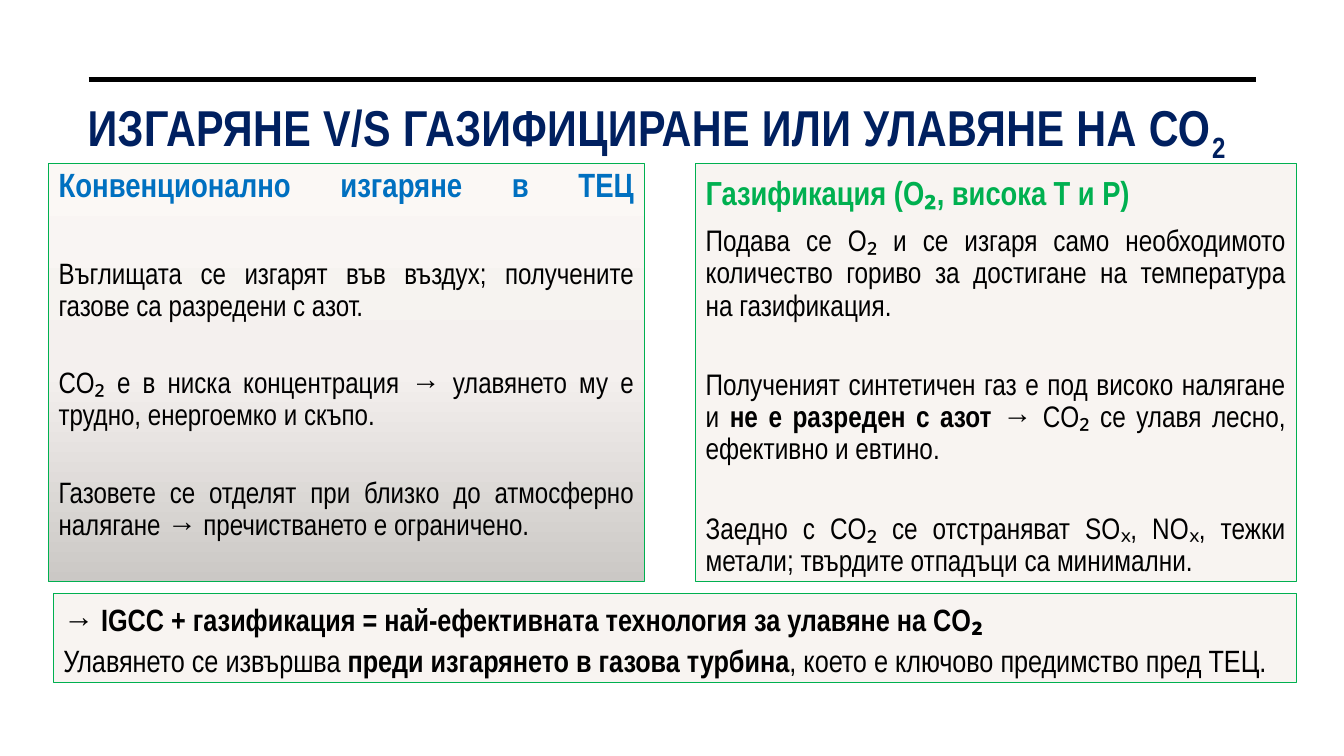
from copy import deepcopy

from lxml.etree import SubElement
from pptx import Presentation
from pptx.dml.color import RGBColor
from pptx.enum.shapes import MSO_CONNECTOR, MSO_SHAPE
from pptx.enum.text import MSO_ANCHOR, MSO_AUTO_SIZE, PP_ALIGN
from pptx.oxml.ns import qn
from pptx.util import Pt

FONT = "Arial Narrow"
BLACK = RGBColor(0x00, 0x00, 0x00)
NAVY = RGBColor(0x00, 0x20, 0x60)
BLUE = RGBColor(0x00, 0x70, 0xC0)
GREEN = RGBColor(0x00, 0xB0, 0x50)
CREAM = RGBColor(0xF8, 0xF4, 0xF1)
SHADES = [
    (0, RGBColor(0xFB, 0xF8, 0xF5)),
    (0.5, RGBColor(0xF4, 0xF0, 0xEE)),
    (1, RGBColor(0xCB, 0xC8, 0xC5)),
]

COMBUSTION = [
    [("Въглищата се изгарят във въздух; получените газове са разредени с азот.", False)],
    [("CO₂ е в ниска концентрация → улавянето му е трудно, енергоемко и скъпо.", False)],
    [("Газовете се отделят при близко до атмосферно налягане → "
      "пречистването е ограничено.", False)],
]
GASIFICATION = [
    [("Подавa се O₂ и се изгаря само необходимото количество гориво "
      "за достигане на температура на газификация.", False)],
    [("Полученият синтетичен газ е под високо налягане и ", False),
     ("не е разреден с азот", True),
     (" → CO₂ се улавя лесно, ефективно и евтино.", False)],
    [("Заедно с CO₂ се отстраняват SOₓ, NOₓ, тежки метали; "
      "твърдите отпадъци са минимални.", False)],
]
CONCLUSION = [
    [("→ IGCC + газификация = най-ефективната технология за улавяне на CO₂", True)],
    [("Улавянето се извършва ", False),
     ("преди изгарянето в газова турбина", True),
     (", което е ключово предимство пред ТЕЦ.", False)],
]


def place(shape, box):
    """Move a shape to a box of left, top, width and height in points."""
    shape.left, shape.top, shape.width, shape.height = map(Pt, box)


def prepare_text(shape, anchor):
    """Return the shape's text frame, wrapped, unscaled and anchored."""
    frame = shape.text_frame
    frame.word_wrap = True
    frame.auto_size = MSO_AUTO_SIZE.NONE
    frame.vertical_anchor = anchor
    return frame


def format_paragraph(paragraph, size, color, align, line_spacing, before):
    """Set the font and spacing of a paragraph and take away its bullet."""
    font = paragraph.font
    font.name, font.size = FONT, Pt(size)
    font.color.rgb = color
    paragraph.alignment = align
    paragraph.line_spacing = line_spacing
    paragraph.space_before, paragraph.space_after = Pt(before), Pt(0)
    properties = paragraph._p.get_or_add_pPr()
    properties.set("marL", "0")
    properties.set("indent", "0")
    bullet = SubElement(properties, qn("a:buNone"))
    properties.find(qn("a:defRPr")).addprevious(bullet)


def add_runs(paragraph, pieces):
    """Write pieces of text, each bold or regular."""
    for text, bold in pieces:
        run = paragraph.add_run()
        run.text = text
        run.font.bold = bold


def outline(shape):
    """Give a panel its thin green border."""
    shape.line.color.rgb = GREEN
    shape.line.width = Pt(0.75)


def shade(shape):
    """Fill a panel with the vertical three-stop gradient."""
    shape.fill.gradient()
    shape.fill.gradient_angle = 270
    first_stop = shape._element.spPr.find(".//" + qn("a:gs"))
    first_stop.addnext(deepcopy(first_stop))
    for stop, (position, color) in zip(shape.fill.gradient_stops, SHADES):
        stop.position = position
        stop.color.rgb = color


def build_title(slide, box):
    """Place the heading and the rule above it."""
    left, top, width, height = box
    rule = slide.shapes.add_connector(
        MSO_CONNECTOR.STRAIGHT, Pt(63.4), Pt(top - 8), Pt(897), Pt(top - 8))
    rule.line.color.rgb = BLACK
    rule.line.width = Pt(3.5)
    SubElement(rule._element.spPr, qn("a:effectLst"))

    title = slide.shapes.title
    place(title, box)
    heading = prepare_text(title, MSO_ANCHOR.TOP).paragraphs[0]
    format_paragraph(heading, 36, NAVY, PP_ALIGN.LEFT, 1, 0)
    add_runs(heading, [("ИЗГАРЯНЕ V/S ГАЗИФИЦИРАНЕ ИЛИ УЛАВЯНЕ НА СО", True), ("2", True)])
    for run in heading.runs:
        run.font._element.set("spc", "30")
    heading.runs[-1].font._element.set("baseline", "-25000")


def build_panel(panel, box, heading, heading_style, points, size, gap):
    """Fill a body placeholder with a coloured heading and justified points."""
    place(panel, box)
    outline(panel)
    frame = prepare_text(panel, MSO_ANCHOR.TOP)
    header = frame.paragraphs[0]
    header.text = heading
    format_paragraph(header, *heading_style, 0)
    header.font.bold = True
    for index, pieces in enumerate(points):
        point = frame.add_paragraph()
        add_runs(point, pieces)
        format_paragraph(point, size, BLACK, PP_ALIGN.JUSTIFY, 0.9, gap if index else 10)


def build_conclusion(slide, box):
    """Add the bordered conclusion along the bottom."""
    conclusion = slide.shapes.add_shape(MSO_SHAPE.RECTANGLE, *map(Pt, box))
    conclusion.shadow.inherit = False
    conclusion.fill.solid()
    conclusion.fill.fore_color.rgb = CREAM
    outline(conclusion)
    frame = prepare_text(conclusion, MSO_ANCHOR.MIDDLE)
    for index, pieces in enumerate(CONCLUSION):
        statement = frame.add_paragraph() if index else frame.paragraphs[0]
        add_runs(statement, pieces)
        format_paragraph(statement, 22, BLACK, PP_ALIGN.LEFT, 1.1, 0)


def main():
    """Build the slide and save it."""
    presentation = Presentation()
    presentation.slide_width, presentation.slide_height = Pt(960), Pt(540)
    slide = presentation.slides.add_slide(presentation.slide_layouts[3])
    combustion, gasification = slide.placeholders[1], slide.placeholders[2]

    build_title(slide, (55.4, 64.8, 877, 103))
    shade(combustion)
    build_panel(combustion, (34.6, 116.6, 425.5, 298.8),
                "Конвенционално изгаряне в ТЕЦ\v",
                (24, BLUE, PP_ALIGN.JUSTIFY, 0.9), COMBUSTION, 21, 33)
    gasification.fill.solid()
    gasification.fill.fore_color.rgb = CREAM
    build_panel(gasification, (496.8, 116.6, 429.1, 298.8),
                "Газификация (O₂, висока T и P)",
                (23.8, GREEN, PP_ALIGN.LEFT, 1.1), GASIFICATION, 21.2, 34)
    build_conclusion(slide, (38.2, 424.1, 887.8, 63.4))
    presentation.save("out.pptx")


if __name__ == "__main__":
    main()
